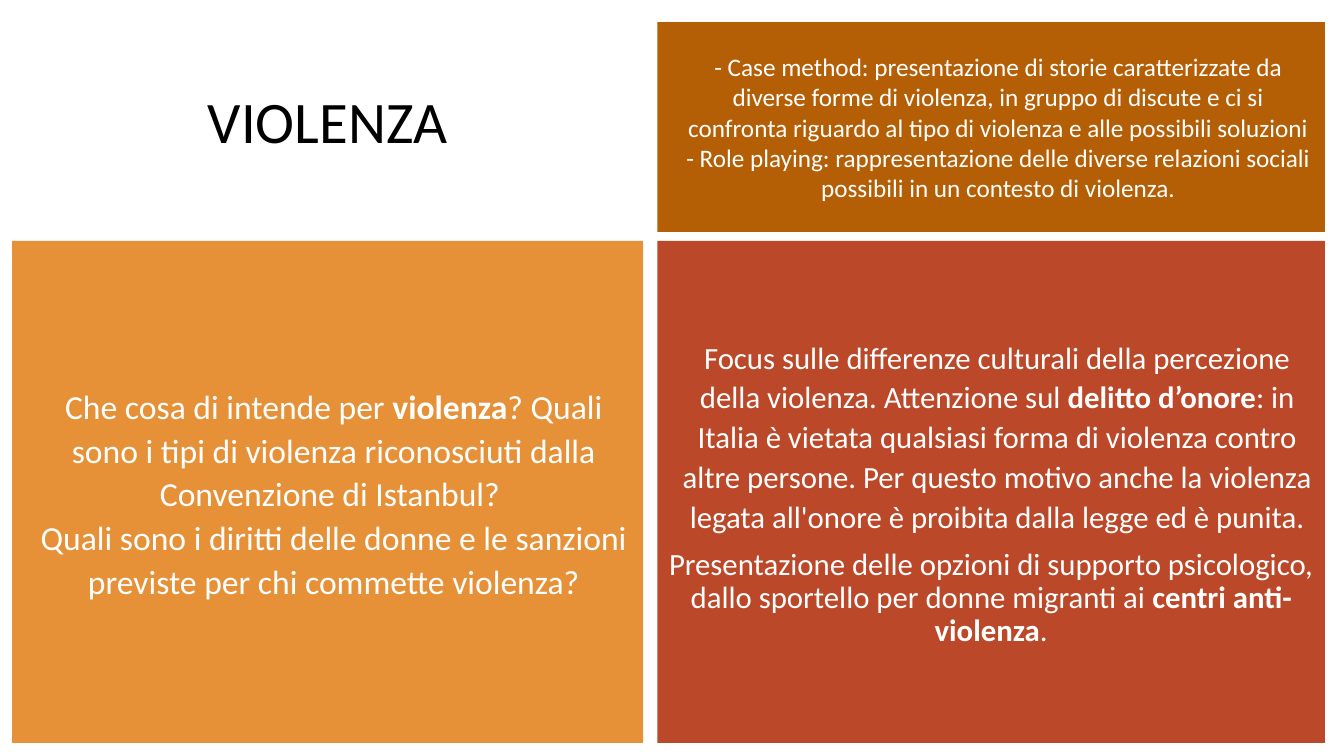
import pptx
import pptx.dml.color
import pptx.enum.shapes
import pptx.enum.text
import pptx.oxml.ns
import pptx.util
from lxml import etree

Inches = pptx.util.Inches
Pt = pptx.util.Pt
ALIGN = pptx.enum.text.PP_ALIGN
MIDDLE = pptx.enum.text.MSO_ANCHOR.MIDDLE

FONT = "Calibri"
WHITE = "FFFFFF"

# Two-by-two grid: (start, length) in inches
COLUMNS = [(0.12, 6.26), (6.52, 6.62)]
ROWS = [(0.22, 2.08), (2.39, 4.98)]

# Each paragraph has its spans (text, bold) and its format values
METHODS = [
    {"indent": 0.14, "spans": [
        ("- Case method: presentazione di storie caratterizzate da diverse forme di violenza, "
         "in gruppo di discute e ci si confronta riguardo al tipo di violenza e alle possibili "
         "soluzioni", False)]},
    {"indent": 0.14, "spans": [
        ("- Role playing: rappresentazione delle diverse relazioni sociali possibili in un "
         "contesto di violenza.", False)]},
]
QUESTIONS = [
    {"indent": 0.12, "format": {"line_spacing": 1.08}, "spans": [
        ("Che cosa di intende per", False),
        (" violenza", True),
        ("? Quali sono i tipi di violenza riconosciuti dalla Convenzione di Istanbul? ", False)]},
    {"indent": 0.12, "format": {"line_spacing": 1.08}, "spans": [
        ("Quali sono i diritti delle donne e le sanzioni previste per chi commette violenza?",
         False)]},
]
FOCUS = [
    {"indent": 0.12, "format": {"line_spacing": 1.08}, "spans": [
        ("Focus sulle differenze culturali della percezione della violenza. Attenzione sul ",
         False),
        ("delitto d’onore", True),
        (": in Italia è vietata qualsiasi forma di violenza contro altre persone. Per questo "
         "motivo anche la violenza legata all'onore è proibita dalla legge ed è punita.",
         False)]},
    {"format": {"line_spacing": 0.9, "space_before": Pt(10)}, "spans": [
        ("Presentazione delle opzioni di supporto psicologico, dallo sportello per donne "
         "migranti ai ", False),
        ("centri anti-violenza", True),
        (".", False)]},
]


def color(value):
    return pptx.dml.color.RGBColor.from_string(value)


def apply(target, values):
    for name, value in values.items():
        setattr(target, name, value)


def cell(column, row):
    """Left, top, width and height of one grid cell."""
    left, width = COLUMNS[column]
    top, height = ROWS[row]
    return [Inches(length) for length in (left, top, width, height)]


def set_frame(frame, vertical_margin):
    apply(frame, {
        "word_wrap": True, "vertical_anchor": MIDDLE,
        "auto_size": pptx.enum.text.MSO_AUTO_SIZE.NONE,
        "margin_left": Inches(0.1), "margin_right": Inches(0.1),
        "margin_top": Inches(vertical_margin), "margin_bottom": Inches(vertical_margin)})


def add_span(para, text, size, ink, bold=False):
    span = para.add_run()
    span.text = text
    apply(span.font, {"name": FONT, "size": Pt(size), "bold": bold})
    span.font.color.rgb = color(ink)


def add_title(page, box, text):
    title = page.shapes.title
    apply(title, dict(zip(("left", "top", "width", "height"), box)))
    set_frame(title.text_frame, 0.05)
    para = title.text_frame.paragraphs[0]
    apply(para, {"alignment": ALIGN.CENTER, "line_spacing": 0.8})
    add_span(para, text, 42, "000000")


def add_panel(page, box, fill, size, paragraphs, opacity=100):
    panel = page.shapes.add_shape(pptx.enum.shapes.MSO_SHAPE.RECTANGLE, *box)
    panel.shadow.inherit = False
    panel.line.fill.background()
    panel.fill.solid()
    panel.fill.fore_color.rgb = color(fill)
    if opacity < 100:
        shade = panel.fill._xPr.find(".//" + pptx.oxml.ns.qn("a:srgbClr"))
        etree.SubElement(shade, pptx.oxml.ns.qn("a:alpha"), val=str(opacity * 1000))

    # Panel text
    frame = panel.text_frame
    set_frame(frame, 0.1)
    for index, content in enumerate(paragraphs):
        para = frame.add_paragraph() if index else frame.paragraphs[0]
        apply(para, {"alignment": ALIGN.CENTER, **content.get("format", {})})
        margin = Inches(content.get("indent", 0))
        para._p.get_or_add_pPr().set("marL", str(margin))
        for text, bold in content["spans"]:
            add_span(para, text, size, WHITE, bold)


def add_violence_page(deck):
    page = deck.slides.add_slide(deck.slide_layouts[5])
    add_title(page, cell(0, 0), "VIOLENZA")
    add_panel(page, cell(1, 0), "B45F06", 18, METHODS)
    add_panel(page, cell(0, 1), "E69138", 24, QUESTIONS)
    add_panel(page, cell(1, 1), "B43512", 22, FOCUS, opacity=90)


def main():
    deck = pptx.Presentation()
    apply(deck, {"slide_width": Inches(13.33), "slide_height": Inches(7.5)})
    add_violence_page(deck)
    deck.save("out.pptx")


if __name__ == "__main__":
    main()
